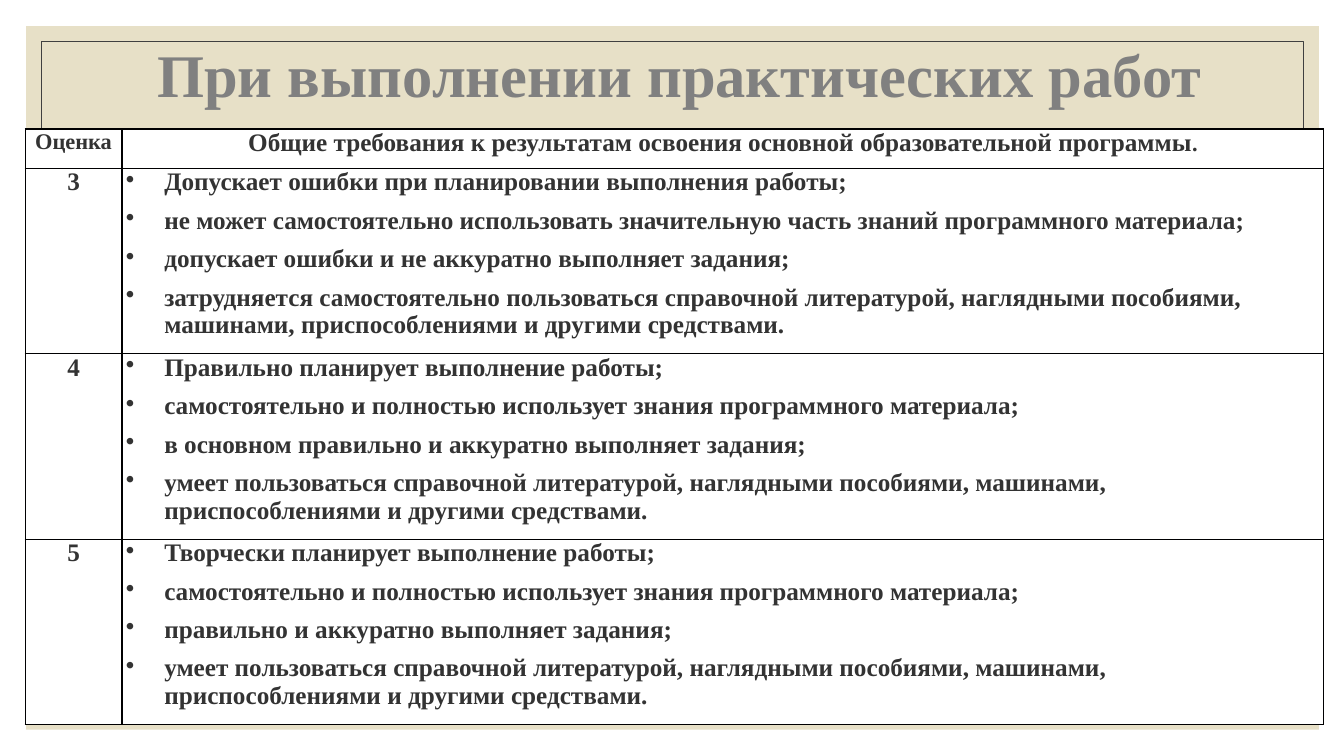
from lxml.etree import SubElement
from pptx import Presentation
from pptx.dml.color import RGBColor
from pptx.enum.shapes import MSO_SHAPE
from pptx.enum.text import MSO_ANCHOR, PP_ALIGN
from pptx.oxml.ns import qn
from pptx.util import Inches, Pt


def color(text):
    return RGBColor.from_string(text)


def style(para, size, shade):
    for run in para.runs:
        run.font.name = "Times New Roman"
        run.font.size = Pt(size)
        run.font.bold = True
        run.font.color.rgb = color(shade)


deck = Presentation()
deck.slide_width = Inches(13.33)
deck.slide_height = Inches(7.5)
slide = deck.slides.add_slide(deck.slide_layouts[6])

panel = slide.shapes.add_shape(
    MSO_SHAPE.RECTANGLE, Inches(0.26), Inches(0.26), Inches(12.82), Inches(6.98))
panel.shadow.inherit = False
panel.fill.solid()
panel.fill.fore_color.rgb = color("E7E0C7")
panel.line.fill.background()

frame = slide.shapes.add_shape(
    MSO_SHAPE.RECTANGLE, Inches(0.41), Inches(0.41), Inches(12.52), Inches(6.68))
frame.shadow.inherit = False
frame.fill.background()
frame.line.color.rgb = color("404040")
frame.line.width = Pt(0.5)

title = slide.shapes.add_textbox(Inches(0.55), Inches(0.46), Inches(12.38), Inches(0.62))
title.text_frame.word_wrap = True
title.text_frame.vertical_anchor = MSO_ANCHOR.MIDDLE
title.text_frame.text = "При выполнении практических работ"
head = title.text_frame.paragraphs[0]
head.alignment = PP_ALIGN.CENTER
head.line_spacing = 0.9
style(head, 43.2, "808080")

skilled = "умеет пользоваться справочной литературой, наглядными пособиями, машинами, приспособлениями и другими средствами."
alone = "самостоятельно и полностью использует знания программного материала;"
rows = [
    ("Оценка", ["Общие требования к результатам освоения основной образовательной программы"]),
    ("3", [
        "Допускает ошибки при планировании выполнения работы;",
        "не может самостоятельно использовать значительную часть знаний программного материала;",
        "допускает ошибки и не аккуратно выполняет задания;",
        "затрудняется самостоятельно пользоваться справочной литературой, наглядными пособиями, машинами, приспособлениями и другими средствами.",
    ]),
    ("4", [
        "Правильно планирует выполнение работы;",
        alone,
        "в основном правильно и аккуратно выполняет задания;",
        skilled,
    ]),
    ("5", [
        "Творчески планирует выполнение работы;",
        alone,
        "правильно и аккуратно выполняет задания;",
        skilled,
    ]),
]

table = slide.shapes.add_table(
    len(rows), 2, Inches(0.25), Inches(1.28), Inches(12.88), Inches(5.91)).table
table.columns[0].width = Inches(0.96)
table.columns[1].width = Inches(11.92)

for r, (grade, points) in enumerate(rows):
    table.rows[r].height = Inches(1.84 if r else 0.39)
    for c, lines in enumerate([[grade], points]):
        cell = table.cell(r, c)
        cell.margin_left = cell.margin_right = Inches(0.04)
        cell.margin_top = cell.margin_bottom = 0
        props = cell._tc.get_or_add_tcPr()
        for side in ("a:lnL", "a:lnR", "a:lnT", "a:lnB"):
            edge = SubElement(props, qn(side), w=str(Pt(1)))
            SubElement(SubElement(edge, qn("a:solidFill")), qn("a:srgbClr"), val="000001")
        cell.fill.solid()
        cell.fill.fore_color.rgb = color("FFFFFF")
        cell.text_frame.text = "\n".join(lines)
        for para in cell.text_frame.paragraphs:
            para.space_after = Pt(7.5)
            style(para, 16 if r == c == 0 else 18, "333333")
            if r and c:
                form = para._p.get_or_add_pPr()
                form.set("marL", str(Inches(0.38)))
                form.set("indent", str(-Inches(0.38)))
                SubElement(form, qn("a:buChar"), char="•")
            else:
                para.alignment = PP_ALIGN.CENTER

para = table.cell(0, 1).text_frame.paragraphs[0]
dot = para.add_run()
dot.text = "."
style(para, 18, "333333")
dot.font.size = Pt(16)

deck.save("out.pptx")
